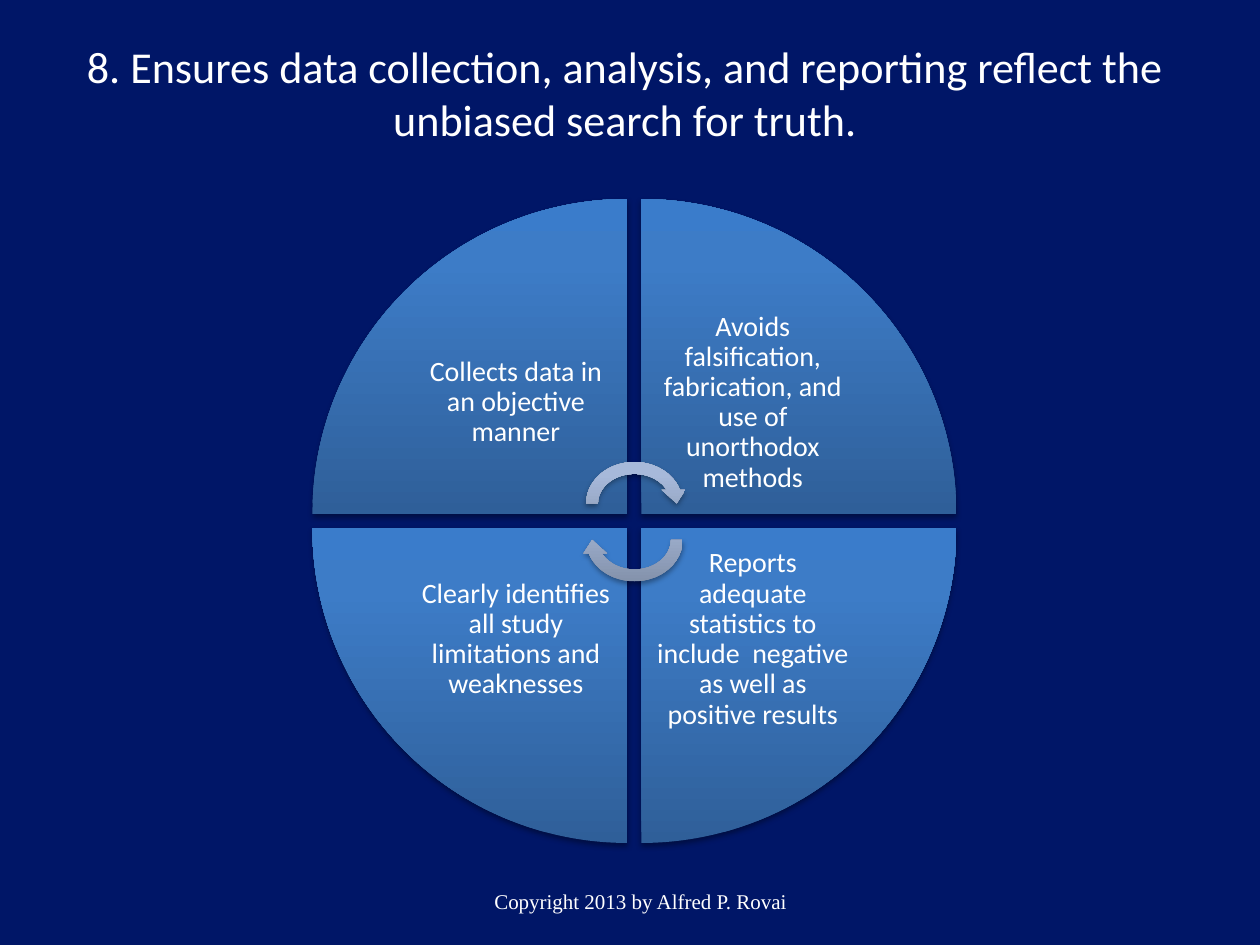
from lxml import etree
from pptx import Presentation
from pptx.dml.color import RGBColor
from pptx.enum.shapes import MSO_SHAPE
from pptx.enum.text import MSO_ANCHOR, MSO_AUTO_SIZE, PP_ALIGN
from pptx.oxml import parse_xml
from pptx.util import Inches, Pt

WEDGE, ARROW = MSO_SHAPE.PIE_WEDGE, MSO_SHAPE.CIRCULAR_ARROW
MIDDLE, CENTER, FIXED = MSO_ANCHOR.MIDDLE, PP_ALIGN.CENTER, MSO_AUTO_SIZE.NONE
NS = "http://schemas.openxmlformats.org/drawingml/2006/main"

THEME = {
    "back": "001667",
    "text": "FFFFFF",
    "wedge": [(0, "2F5F99"), (80, "3D7CC7"), (100, "3A7CCB")],
    "arrow": [(0, "818FA8"), (80, "A7B9DA"), (100, "A7BADC")],
    "sans": "Calibri",
    "serif": "Times New Roman",
    "title": 25.2,
    "body": 16,
    "foot": 12,
}


def write(box, words, size, font=THEME["sans"], pad=0.05, space=1.0):
    frame = box.text_frame
    frame.word_wrap = True
    frame.auto_size = FIXED
    frame.vertical_anchor = MIDDLE
    frame.margin_left = frame.margin_right = Inches(pad)
    frame.margin_top = frame.margin_bottom = Inches(pad)
    para = frame.paragraphs[0]
    para.alignment = CENTER
    para.line_spacing = space
    run = para.add_run()
    run.text = words
    run.font.size = Pt(size)
    run.font.name = font
    run.font.color.rgb = RGBColor.from_string(THEME["text"])


def draw(kind, left, top, wide, high, turn, stops):
    shape = slide.shapes.add_shape(kind, *map(Inches, (left, top, wide, high)))
    shape.rotation = turn
    shape.line.fill.background()
    shape.fill.background()
    shape.shadow.inherit = False
    marks = "".join(
        f'<a:gs pos="{at * 1000}"><a:srgbClr val="{tone}"/></a:gs>' for at, tone in stops
    )
    props = shape.element.spPr
    props.replace(props.find(f"{{{NS}}}noFill"), parse_xml(
        f'<a:gradFill xmlns:a="{NS}" rotWithShape="0"><a:gsLst>{marks}</a:gsLst>'
        '<a:lin ang="16200000" scaled="0"/></a:gradFill>'
    ))
    glow = etree.SubElement(
        props.find(f"{{{NS}}}effectLst"), f"{{{NS}}}outerShdw",
        blurRad=str(Pt(3.1)), dist=str(Pt(1.8)), dir="5400000", rotWithShape="0",
    )
    tone = etree.SubElement(glow, f"{{{NS}}}srgbClr", val="000000")
    etree.SubElement(tone, f"{{{NS}}}alpha", val="35000")


deck = Presentation()
deck.slide_width, deck.slide_height = Inches(10), Inches(7.5)
slide = deck.slides.add_slide(deck.slide_layouts[5])
slide.background.fill.solid()
slide.background.fill.fore_color.rgb = RGBColor.from_string(THEME["back"])

title = slide.shapes.title
title.left, title.top, title.width, title.height = map(Inches, (0.42, 0.23, 9.08, 1))
write(
    title,
    "8. Ensures data collection, analysis, and reporting reflect the unbiased search for truth.",
    THEME["title"],
)

foot = slide.shapes.add_textbox(*map(Inches, (1.75, 6.95, 6.67, 0.4)))
write(foot, "Copyright 2013 by Alfred P. Rovai", THEME["foot"], font=THEME["serif"])

LEFT, TOP, SIDE, GAP, INNER = 2.48, 1.58, 2.5, 0.11, 1.77
STEP = SIDE + GAP
parts = [
    (0, 0, "Collects data in an objective manner"),
    (1, 0, "Avoids falsification, fabrication, and use of unorthodox methods"),
    (1, 1, "Reports adequate statistics to include  negative as well as positive results"),
    (0, 1, "Clearly identifies all study limitations and weaknesses"),
]
for count, (col, row, words) in enumerate(parts):
    left, top = LEFT + col * STEP, TOP + row * STEP
    draw(WEDGE, left, top, SIDE, SIDE, count * 90, THEME["wedge"])
    inset = SIDE - INNER
    box = slide.shapes.add_textbox(
        Inches(left + (1 - col) * inset), Inches(top + (1 - row) * inset),
        Inches(INNER), Inches(INNER),
    )
    write(box, words, THEME["body"], pad=0.12, space=0.9)

WIDE, HIGH = 0.86, 0.75
mid = LEFT + SIDE + GAP / 2
for top, turn in ((3.62, 0), (3.91, 180)):
    draw(ARROW, mid - WIDE / 2, top, WIDE, HIGH, turn, THEME["arrow"])

deck.save("out.pptx")
